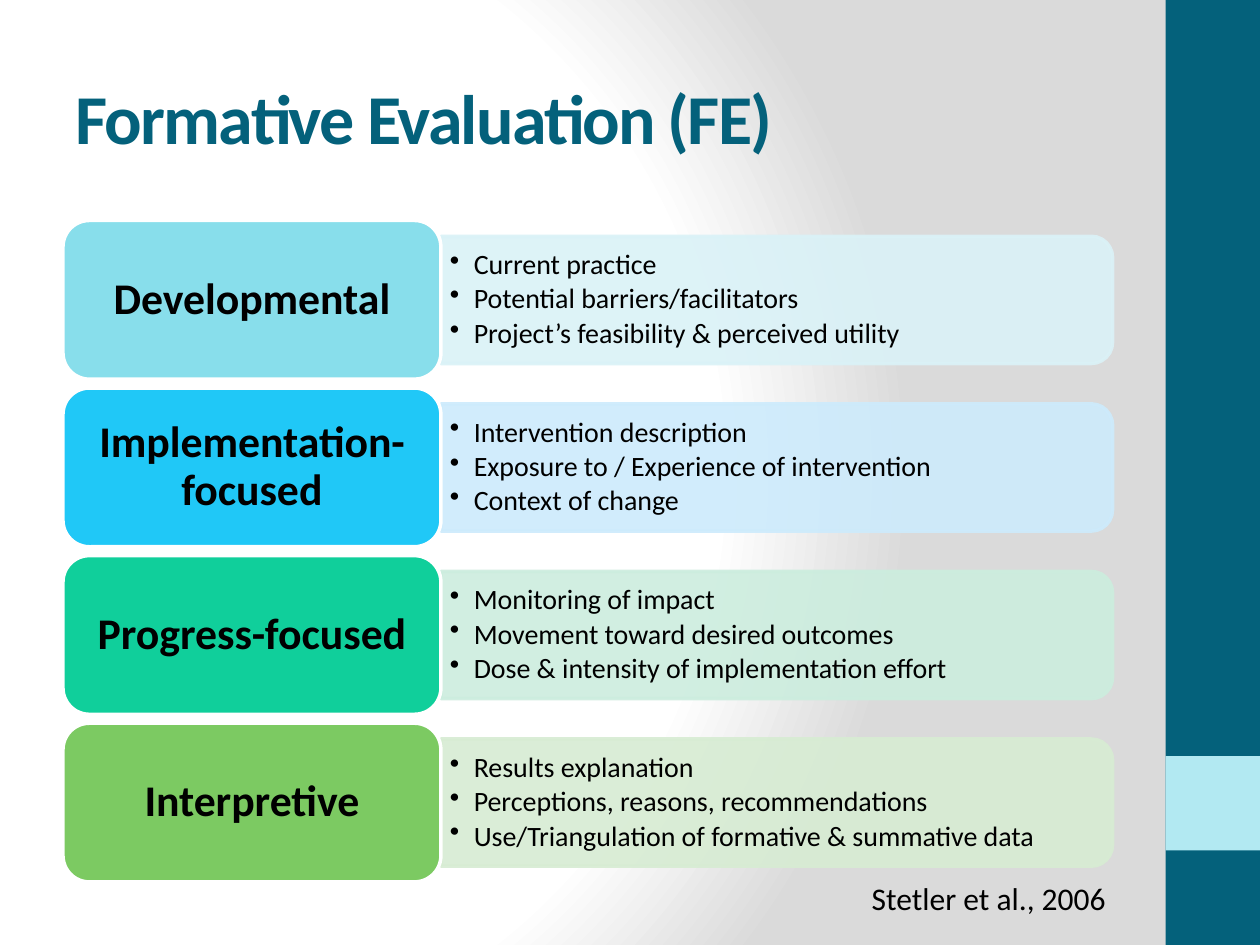
from pptx import Presentation
from pptx.dml.color import RGBColor
from pptx.enum.shapes import MSO_SHAPE as Kind
from pptx.enum.text import MSO_ANCHOR as Anchor, PP_ALIGN as Align
from pptx.oxml import parse_xml as to_xml
from pptx.oxml.ns import nsdecls as names, qn
from pptx.util import Inches, Pt

WIDE, HIGH = Inches(10), Inches(7.5)
FONT = "Calibri"
BLACK = RGBColor(0, 0, 0)
WHITE = RGBColor(0xFF, 0xFF, 0xFF)
GRAY = RGBColor(0xDA, 0xDA, 0xDA)
TEAL = RGBColor(0x04, 0x61, 0x7B)
PALE = RGBColor(0xB2, 0xE9, 0xF2)

LEFT, TOP, STEP = Inches(0.5), Inches(1.75), Inches(1.33)
CARD_W, CARD_H = Inches(3), Inches(1.26)
PANEL_W, PANEL_H = Inches(5.33), Inches(1.01)
NOTE_W, NOTE_H = Inches(5.28), Inches(0.91)

ROWS = [
    ("Developmental", RGBColor(0x88, 0xDE, 0xEB), RGBColor(0xDA, 0xF2, 0xF7),
     ["Current practice", "Potential barriers/facilitators",
      "Project’s feasibility & perceived utility"]),
    ("Implementation-focused", RGBColor(0x20, 0xC8, 0xF7), RGBColor(0xCD, 0xEB, 0xFC),
     ["Intervention description", "Exposure to / Experience of intervention",
      "Context of change"]),
    ("Progress-focused", RGBColor(0x10, 0xCF, 0x9B), RGBColor(0xCC, 0xED, 0xDE),
     ["Monitoring of impact", "Movement toward desired outcomes",
      "Dose & intensity of implementation effort"]),
    ("Interpretive", RGBColor(0x7C, 0xCA, 0x62), RGBColor(0xD7, 0xEC, 0xD3),
     ["Results explanation", "Perceptions, reasons, recommendations",
      "Use/Triangulation of formative & summative data"]),
]


def add_back(slide):
    slide.background.fill.solid()
    plain = slide.element.find(".//" + qn("a:solidFill"))
    stops = "".join(
        f'<a:gs pos="{pos}000"><a:srgbClr val="{tone}"/></a:gs>'
        for pos, tone in ((0, WHITE), (75, WHITE), (100, GRAY)))
    grad = to_xml(
        f'<a:gradFill {names("a")} rotWithShape="1"><a:gsLst>{stops}</a:gsLst>'
        '<a:path path="circle"><a:fillToRect l="20000" t="50000" '
        'r="100000" b="50000"/></a:path></a:gradFill>')
    plain.getparent().replace(plain, grad)


def add_form(slide, kind, box, fill, line=None):
    form = slide.shapes.add_shape(kind, *box)
    form.shadow.inherit = False
    form.fill.solid()
    form.fill.fore_color.rgb = fill
    if line is None:
        form.line.fill.background()
    else:
        form.line.color.rgb = line
        form.line.width = Pt(2)
    return form


def add_run(para, text, size, color=BLACK, bold=False):
    run = para.add_run()
    run.text = text
    font = run.font
    font.name, font.size, font.bold = FONT, Pt(size), bold
    font.color.rgb = color
    return run


def add_text(slide, box, wrap=True, anchor=Anchor.MIDDLE):
    frame = slide.shapes.add_textbox(*box).text_frame
    frame.word_wrap = wrap
    frame.vertical_anchor = anchor
    return frame


def add_panel(slide, mid, tint):
    left = LEFT + CARD_W + (PANEL_W - PANEL_H) // 2
    box = left, mid - PANEL_W // 2, PANEL_H, PANEL_W
    panel = add_form(slide, Kind.ROUND_2_SAME_RECTANGLE, box, tint, tint)
    panel.rotation = 90
    for tone in panel.element.spPr.iter(qn("a:srgbClr")):
        tone.append(to_xml(f'<a:alpha {names("a")} val="90000"/>'))


def add_list(slide, mid, items):
    box = LEFT + CARD_W, mid - NOTE_H // 2, NOTE_W, NOTE_H
    frame = add_text(slide, box)
    frame.margin_left = frame.margin_right = Inches(0.07)
    frame.margin_top = frame.margin_bottom = Inches(0.03)
    for rank, item in enumerate(items):
        para = frame.add_paragraph() if rank else frame.paragraphs[0]
        para.line_spacing = 0.9
        para.space_after = Pt(2.4)
        props = para._p.get_or_add_pPr()
        props.set("marL", str(Inches(0.19)))
        props.set("indent", str(-Inches(0.19)))
        props.append(to_xml(f'<a:buChar {names("a")} char="•"/>'))
        add_run(para, item, 16)


def add_card(slide, mid, label, fill):
    box = LEFT, mid - CARD_H // 2, CARD_W, CARD_H
    frame = add_form(slide, Kind.ROUNDED_RECTANGLE, box, fill, WHITE).text_frame
    frame.word_wrap = True
    frame.vertical_anchor = Anchor.MIDDLE
    para = frame.paragraphs[0]
    para.alignment = Align.CENTER
    para.line_spacing = 0.9
    add_run(para, label, 25, bold=True)


def add_title(slide, text):
    box = LEFT, Inches(0.3), Inches(8.33), Inches(1.25)
    run = add_run(add_text(slide, box).paragraphs[0], text, 40, TEAL, True)
    run.font._element.set("spc", "-100")


def main():
    deck = Presentation()
    deck.slide_width, deck.slide_height = WIDE, HIGH
    slide = deck.slides.add_slide(deck.slide_layouts[6])
    add_back(slide)
    band = Inches(0.75)
    add_form(slide, Kind.RECTANGLE, (WIDE - band, 0, band, HIGH), TEAL)
    add_form(slide, Kind.RECTANGLE, (WIDE - band, HIGH - 2 * band, band, band), PALE)
    add_title(slide, "Formative Evaluation (FE)")
    for row, (label, fill, tint, items) in enumerate(ROWS):
        mid = TOP + row * STEP + CARD_H // 2
        add_panel(slide, mid, tint)
        add_list(slide, mid, items)
        add_card(slide, mid, label, fill)
    box = Inches(6.82), Inches(6.93), Inches(2.08), Inches(0.4)
    cite = add_text(slide, box, False, Anchor.TOP)
    add_run(cite.paragraphs[0], "Stetler et al., 2006", 18)
    deck.save("out.pptx")


if __name__ == "__main__":
    main()
